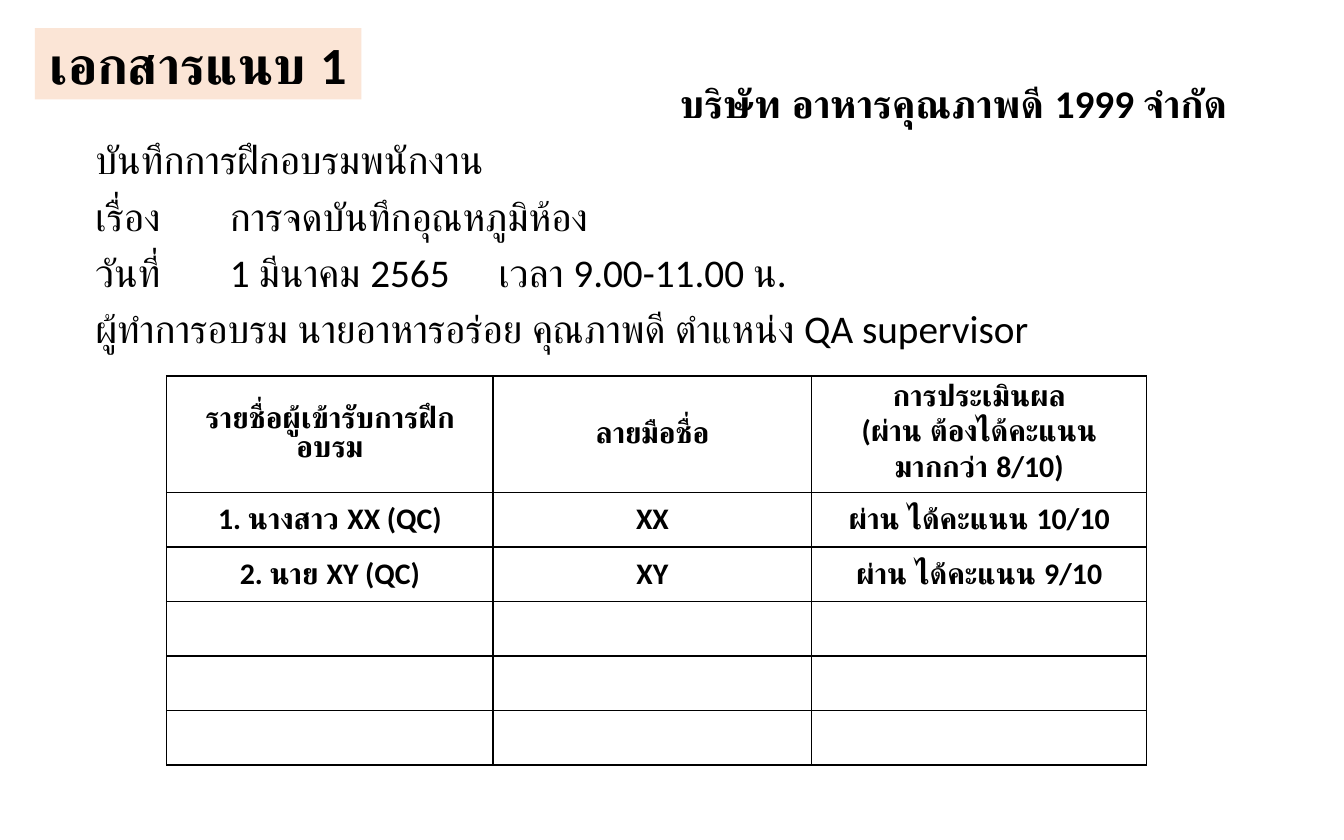
from lxml import etree
from pptx import Presentation
from pptx import util as u
from pptx.dml.color import RGBColor
from pptx.enum import text
from pptx.oxml import ns

COLORS = {"ink": "000000", "paper": "FFFFFF", "label": "FBE5D6"}
FONT = "Calibri"
TAB_STOPS = (u.Cm(1.91), u.Cm(7.62))
COLUMN_WIDTHS = (u.Cm(6.17), u.Cm(6.02), u.Cm(6.33))
ROW_HEIGHT = u.Cm(1.03)

COMPANY = "บริษัท อาหารคุณภาพดี 1999 จำกัด"
DETAILS = (
    "บันทึกการฝึกอบรมพนักงาน",
    "เรื่อง \tการจดบันทึกอุณหภูมิห้อง",
    "วันที่ \t1 มีนาคม 2565 \tเวลา 9.00-11.00 น.",
    "ผู้ทำการอบรม นายอาหารอร่อย คุณภาพดี ตำแหน่ง QA supervisor",
)
HEADINGS = (
    "รายชื่อผู้เข้ารับการฝึกอบรม",
    "ลายมือชื่อ",
    "การประเมินผล\n(ผ่าน ต้องได้คะแนนมากกว่า 8/10)",
)
TRAINEES = (
    ("1. นางสาว XX (QC)", "XX", "ผ่าน ได้คะแนน 10/10"),
    ("2. นาย XY (QC)", "XY", "ผ่าน ได้คะแนน 9/10"),
)
BLANK_ROWS = 3


def color(name):
    return RGBColor.from_string(COLORS[name])


def child(parent, tag, **attributes):
    """Append a DrawingML element to parent."""
    values = {key: str(value) for key, value in attributes.items()}
    return etree.SubElement(parent, ns.qn(tag), values)


def add_span(para, words, size, bold=True):
    span = para.add_run()
    span.text = words
    span.font.name = FONT
    span.font.size = u.Pt(size)
    span.font.bold = bold
    span.font.color.rgb = color("ink")


def place(box, left, top, width, height):
    box.left, box.top = u.Cm(left), u.Cm(top)
    box.width, box.height = u.Cm(width), u.Cm(height)


def fill_label(box, words):
    place(box, 0.66, 0.53, 6.17, 1.35)
    box.fill.solid()
    box.fill.fore_color.rgb = color("label")
    frame = box.text_frame
    frame.auto_size = text.MSO_AUTO_SIZE.NONE
    frame.word_wrap = True
    frame.margin_left = frame.margin_right = u.Cm(0.1)
    frame.vertical_anchor = text.MSO_ANCHOR.MIDDLE
    para = frame.paragraphs[0]
    para.alignment = text.PP_ALIGN.CENTER
    add_span(para, words, 28)


def format_detail(para, alignment):
    """Space the paragraph, drop its bullet and set its tab stops."""
    para.alignment = alignment
    para.line_spacing = 0.9
    para.space_before = u.Pt(7.5)
    properties = para._p.get_or_add_pPr()
    properties.set("marL", "0")
    properties.set("indent", "0")
    child(properties, "a:buNone")
    tabs = child(properties, "a:tabLst")
    for stop in TAB_STOPS:
        child(tabs, "a:tab", pos=int(stop), algn="l")


def fill_body(box):
    place(box, 1.55, 1.47, 21.89, 5.87)
    frame = box.text_frame
    frame.auto_size = text.MSO_AUTO_SIZE.NONE
    frame.word_wrap = True
    company = frame.paragraphs[0]
    format_detail(company, text.PP_ALIGN.RIGHT)
    add_span(company, COMPANY, 21)
    for words in DETAILS:
        para = frame.add_paragraph()
        format_detail(para, text.PP_ALIGN.LEFT)
        add_span(para, words, 21, bold=False)


def format_cell(cell):
    properties = cell._tc.get_or_add_tcPr()
    for side in ("a:lnL", "a:lnR", "a:lnT", "a:lnB"):
        line = child(properties, side, w=int(u.Pt(1)))
        child(child(line, "a:solidFill"), "a:srgbClr", val=COLORS["ink"])
    cell.fill.solid()
    cell.fill.fore_color.rgb = color("paper")
    cell.vertical_anchor = text.MSO_ANCHOR.MIDDLE


def fill_cell(cell, words):
    format_cell(cell)
    para = cell.text_frame.paragraphs[0]
    para.alignment = text.PP_ALIGN.CENTER
    para.font.size = u.Pt(16)
    for number, line in enumerate(words.splitlines()):
        if number:
            para.add_line_break()
        add_span(para, line, 16)


def add_attendance(page):
    blank = ("",) * len(HEADINGS)
    rows = (HEADINGS, *TRAINEES, *[blank] * BLANK_ROWS)
    frame = page.shapes.add_table(
        len(rows), len(HEADINGS), u.Cm(3.15), u.Cm(7.11),
        sum(COLUMN_WIDTHS), ROW_HEIGHT * len(rows))
    table = frame.table
    table.first_row = table.horz_banding = False
    for column, width in zip(table.columns, COLUMN_WIDTHS):
        column.width = width
    for row, entries in zip(table.rows, rows):
        row.height = ROW_HEIGHT
        for cell, words in zip(row.cells, entries):
            fill_cell(cell, words)


def main():
    deck = Presentation()
    deck.slide_width, deck.slide_height = u.Cm(25.4), u.Cm(15.88)
    page = deck.slides.add_slide(deck.slide_layouts[1])
    fill_body(page.placeholders[1])
    add_attendance(page)
    fill_label(page.shapes.title, "เอกสารแนบ 1")
    deck.save("out.pptx")


if __name__ == "__main__":
    main()
